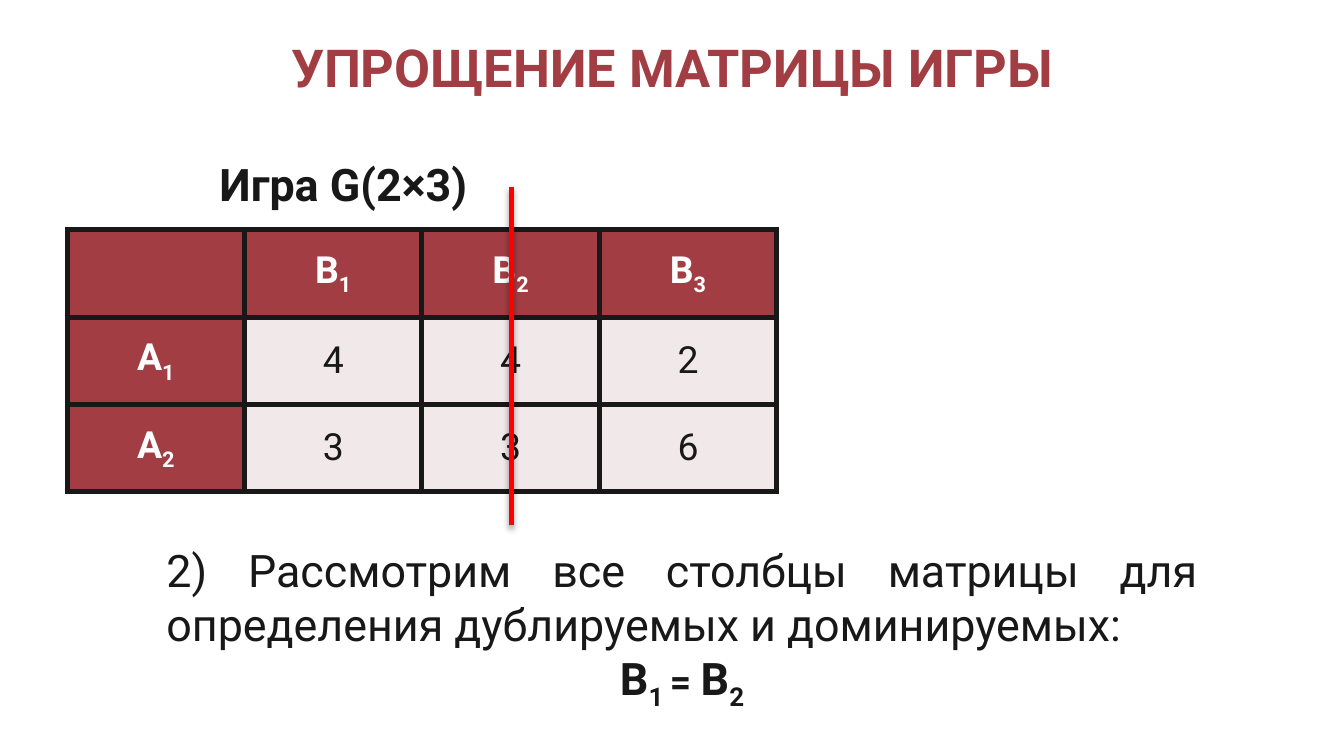
from typing import NamedTuple

from lxml import etree
from pptx import Presentation
from pptx.dml.color import RGBColor
from pptx.enum.shapes import MSO_CONNECTOR
from pptx.enum.text import MSO_ANCHOR, MSO_AUTO_SIZE, PP_ALIGN
from pptx.oxml import parse_xml
from pptx.oxml.ns import nsdecls, qn
from pptx.util import Emu, Pt

CENTER, JUSTIFY, LEFT = PP_ALIGN.CENTER, PP_ALIGN.JUSTIFY, PP_ALIGN.LEFT
MIDDLE = MSO_ANCHOR.MIDDLE
NO_FIT, GROW = MSO_AUTO_SIZE.NONE, MSO_AUTO_SIZE.SHAPE_TO_FIT_TEXT
STRAIGHT = MSO_CONNECTOR.STRAIGHT

EMU_PER_PX = 4572  # 200 px to the inch
SLIDE_WIDTH, SLIDE_HEIGHT = 2000, 1125
FONT = "Roboto"
SUBSCRIPT = "-25000"
BORDER_POINTS = 3
TITLE_ONLY_LAYOUT = 5
COLORS = {
    "accent": "A23E43",
    "ink": "181818",
    "white": "FFFFFF",
    "cell": "F0E8E9",
    "strike": "FF0000",
    "shadow": "000000",
}


class Box(NamedTuple):
    left: int
    top: int
    width: int
    height: int


class Run(NamedTuple):
    text: str
    size: int = 24
    bold: bool = False
    color: str = "ink"
    subscript: bool = False


class Line(NamedTuple):
    runs: list[Run]
    alignment: PP_ALIGN = LEFT


TITLE_BOX = Box(100, 29, 1800, 140)
CAPTION_BOX = Box(307, 224, 1574, 100)
TABLE_BOX = Box(100, 342, 1056, 390)
NOTE_BOX = Box(228, 798, 1574, 262)
STRIKE_X, STRIKE_TOP, STRIKE_BOTTOM = 761, 278, 782

GAME_MATRIX = [
    ["", "B1", "B2", "B3"],
    ["A1", "4", "4", "2"],
    ["A2", "3", "3", "6"],
]


def px(length: int) -> Emu:
    return Emu(length * EMU_PER_PX)


def rgb(name: str) -> RGBColor:
    return RGBColor.from_string(COLORS[name])


def apply(target, values: dict) -> None:
    for name, value in values.items():
        setattr(target, name, value)


def place(shape, box: Box) -> None:
    apply(shape, {name: px(value) for name, value in box._asdict().items()})


def write(text_frame, lines: list[Line]) -> None:
    for index, line in enumerate(lines):
        paragraph = text_frame.add_paragraph() if index else text_frame.paragraphs[0]
        paragraph.alignment = line.alignment
        for item in line.runs:
            run = paragraph.add_run()
            run.text = item.text
            apply(run.font, {"name": FONT, "size": Pt(item.size), "bold": item.bold})
            run.font.color.rgb = rgb(item.color)
            if item.subscript:
                run.font._element.set("baseline", SUBSCRIPT)


def add_text(slide, box: Box, lines: list[Line]) -> None:
    shape = slide.shapes.add_textbox(*map(px, box))
    apply(shape.text_frame, {"word_wrap": True, "auto_size": GROW})
    write(shape.text_frame, lines)


def add_borders(cell) -> None:
    properties = cell._tc.get_or_add_tcPr()
    for index, side in enumerate(("lnL", "lnR", "lnT", "lnB")):
        properties.insert(index, parse_xml(
            f'<a:{side} {nsdecls("a")} w="{Pt(BORDER_POINTS)}">'
            f'<a:solidFill><a:srgbClr val="{COLORS["ink"]}"/></a:solidFill></a:{side}>'))


def add_matrix(slide, box: Box, rows: list[list[str]]) -> None:
    table = slide.shapes.add_table(len(rows), len(rows[0]), *map(px, box)).table
    for row_index, row in enumerate(rows):
        for column_index, label in enumerate(row):
            is_header = row_index == 0 or column_index == 0
            cell = table.cell(row_index, column_index)
            apply(cell, {
                "vertical_anchor": MIDDLE,
                "margin_left": px(14), "margin_right": px(14),
                "margin_top": 0, "margin_bottom": 0,
            })
            cell.fill.solid()
            cell.fill.fore_color.rgb = rgb("accent" if is_header else "cell")
            add_borders(cell)
            # The first character is the name, the second its index
            color = "white" if is_header else "ink"
            runs = [Run(character, 20, is_header, color, position > 0)
                    for position, character in enumerate(label)]
            write(cell.text_frame, [Line(runs, CENTER)])


def add_strike(slide, x: int, top: int, bottom: int) -> None:
    connector = slide.shapes.add_connector(STRAIGHT, px(x), px(top), px(x), px(bottom))
    connector.line.color.rgb = rgb("strike")
    connector.line.width = Pt(3)
    effects = etree.SubElement(connector._element.spPr, qn("a:effectLst"))
    effects.append(parse_xml(
        f'<a:outerShdw {nsdecls("a")} blurRad="{Pt(3.1)}" dist="{Pt(1.8)}" '
        f'dir="5400000" rotWithShape="0"><a:srgbClr val="{COLORS["shadow"]}">'
        '<a:alpha val="35000"/></a:srgbClr></a:outerShdw>'))


def main() -> None:
    presentation = Presentation()
    apply(presentation, {"slide_width": px(SLIDE_WIDTH), "slide_height": px(SLIDE_HEIGHT)})
    slide = presentation.slides.add_slide(presentation.slide_layouts[TITLE_ONLY_LAYOUT])

    # Title
    title = slide.shapes.title
    place(title, TITLE_BOX)
    apply(title.text_frame, {"word_wrap": True, "auto_size": NO_FIT, "vertical_anchor": MIDDLE})
    write(title.text_frame, [Line([Run("УПРОЩЕНИЕ МАТРИЦЫ ИГРЫ", 28, True, "accent")], CENTER)])

    # Game matrix with its caption
    add_text(slide, CAPTION_BOX, [Line([Run("Игра G(2×3)", bold=True)])])
    add_matrix(slide, TABLE_BOX, GAME_MATRIX)

    # Explanation and the equality of the two columns
    add_text(slide, NOTE_BOX, [
        Line([Run("2) Рассмотрим все столбцы матрицы для "
                  "определения дублируемых и доминируемых:")], JUSTIFY),
        Line([
            Run("B", bold=True),
            Run("1 ", bold=True, subscript=True),
            Run("= ", 20, True),
            Run("B", bold=True),
            Run("2", bold=True, subscript=True),
        ], CENTER),
    ])

    # Line that strikes out the duplicate column
    add_strike(slide, STRIKE_X, STRIKE_TOP, STRIKE_BOTTOM)

    presentation.save("out.pptx")


if __name__ == "__main__":
    main()
